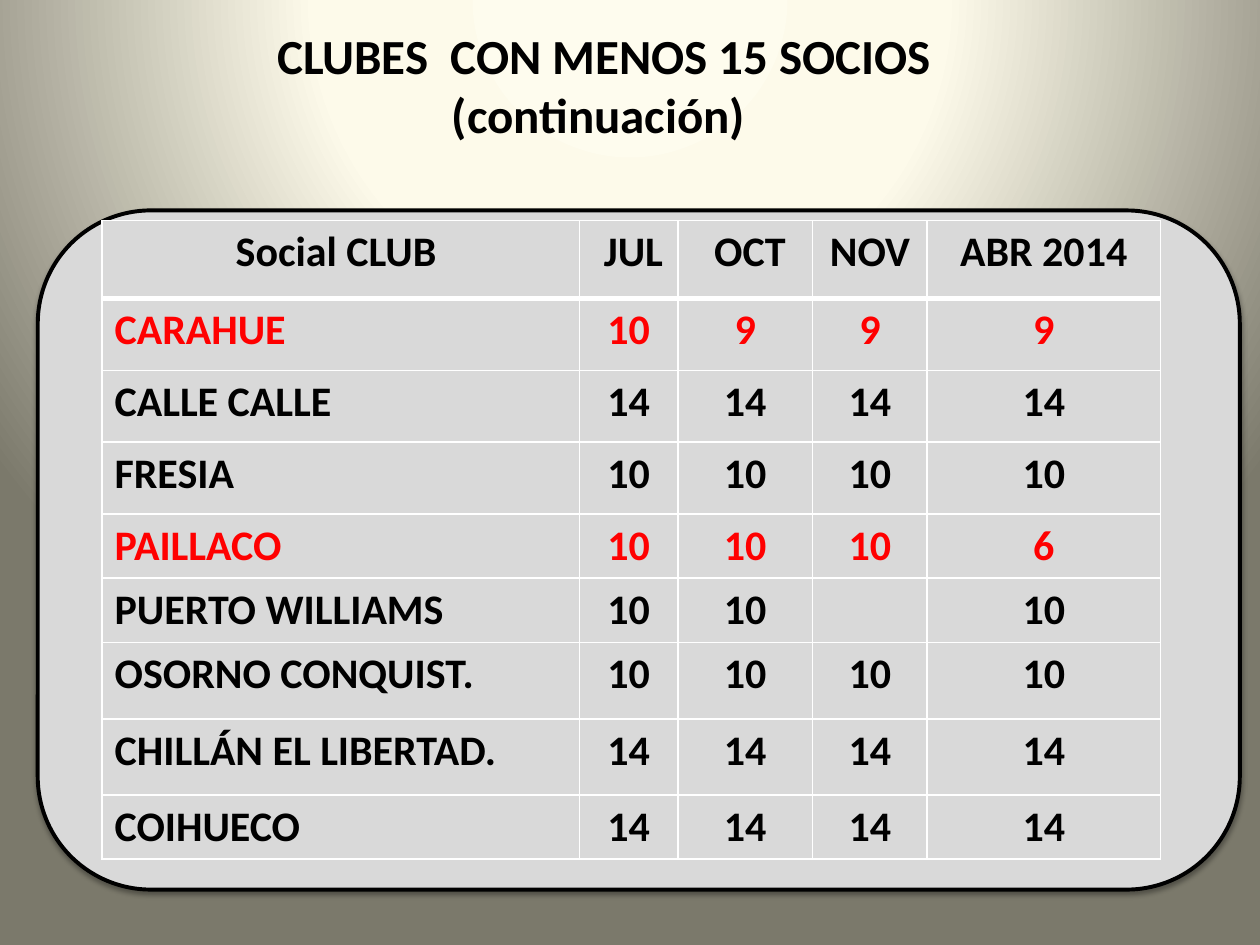
from dataclasses import dataclass
from itertools import product

from pptx import Presentation, util as u
from pptx.dml.color import RGBColor
from pptx.enum import shapes, text
from pptx.oxml import parse_xml
from pptx.oxml.ns import nsdecls, qn

BLACK = RGBColor(0, 0, 0)
RED = RGBColor(255, 0, 0)
GREY = RGBColor(0xD9, 0xD9, 0xD9)
WHITE = RGBColor(255, 255, 255)
CREAM = RGBColor(0xFE, 0xFC, 0xEE)
IVORY = RGBColor(0xFD, 0xFA, 0xEA)
OLIVE = RGBColor(0x7B, 0x79, 0x6B)

FONT = "Calibri"
WIDE, HIGH = u.Inches(10), u.Inches(7.5)
COLS = (3.79, 0.78, 1.07, 0.91, 1.85)
ROWS = (0.62, 0.57, 0.57, 0.57, 0.51, 0.51, 0.61, 0.6, 0.51)


@dataclass
class Box:
    left: float
    top: float
    width: float
    height: float

    def place(self) -> tuple:
        return (int(self.left * WIDE), int(self.top * HIGH),
                int(self.width * WIDE), int(self.height * HIGH))


@dataclass
class Club:
    name: str
    counts: tuple
    color: RGBColor = BLACK


HEAD = Club("Social CLUB ", (" JUL", " OCT", "NOV", "ABR 2014"))
CLUBS = (
    Club("CARAHUE", (10, 9, 9, 9), RED),
    Club("CALLE CALLE", (14,) * 4),
    Club("FRESIA", (10,) * 4),
    Club("PAILLACO", (10, 10, 10, 6), RED),
    Club("PUERTO WILLIAMS", (10, 10, "", 10)),
    Club("OSORNO CONQUIST.", (10,) * 4),
    Club("CHILLÁN EL LIBERTAD.", (14,) * 4),
    Club("COIHUECO", (14,) * 4),
)


def write(para, words: str, size: int, color: RGBColor, align) -> None:
    para.alignment = align
    run = para.add_run()
    run.text = words
    font = run.font
    font.name, font.size, font.bold = FONT, u.Pt(size), True
    font.color.rgb = color


def paint(slide) -> None:
    slide.background.fill.gradient()
    old = next(slide.element.iter(qn("a:gradFill")))
    stops = "".join(
        f'<a:gs pos="{pos * 1000}"><a:srgbClr val="{color}"/></a:gs>'
        for pos, color in ((0, CREAM), (40, IVORY), (100, OLIVE)))
    new = parse_xml(
        f'<a:gradFill {nsdecls("a")} rotWithShape="1"><a:gsLst>{stops}</a:gsLst>'
        '<a:path path="circle"><a:fillToRect l="50000" t="-80000" r="50000" '
        'b="180000"/></a:path></a:gradFill>')
    old.getparent().replace(old, new)


def head(slide, box: Box) -> None:
    title = slide.shapes.title
    title.left, title.top, title.width, title.height = box.place()
    frame = title.text_frame
    frame.word_wrap = False
    frame.auto_size = text.MSO_AUTO_SIZE.NONE
    frame.vertical_anchor = text.MSO_ANCHOR.TOP
    lines = (" CLUBES  CON MENOS 15 SOCIOS", "(continuación)")
    for spot, line in enumerate(lines):
        para = frame.add_paragraph() if spot else frame.paragraphs[0]
        write(para, line, 28, BLACK, text.PP_ALIGN.CENTER)


def panel(slide, box: Box) -> None:
    shape = slide.shapes.add_shape(
        shapes.MSO_SHAPE.ROUNDED_RECTANGLE, *box.place())
    shape.fill.solid()
    shape.fill.fore_color.rgb = GREY
    shape.line.color.rgb = BLACK
    shape.line.width = u.Pt(2.25)
    shape.shadow.inherit = False
    shape.element.spPr.find(qn("a:effectLst")).append(parse_xml(
        f'<a:outerShdw {nsdecls("a")} blurRad="{u.Pt(3.1)}" dist="{u.Pt(1.8)}" '
        f'dir="5400000" rotWithShape="0"><a:srgbClr val="{BLACK}">'
        '<a:alpha val="35000"/></a:srgbClr></a:outerShdw>'))


def edge(cell, side: str, width: float) -> None:
    props = cell._tc.get_or_add_tcPr()
    props.append(parse_xml(
        f'<a:ln{side} {nsdecls("a")} w="{u.Pt(width)}"><a:solidFill>'
        f'<a:srgbClr val="{WHITE}"/></a:solidFill></a:ln{side}>'))


def grid(slide, box: Box) -> None:
    table = slide.shapes.add_table(len(ROWS), len(COLS), *box.place()).table
    for col, width in zip(table.columns, COLS):
        col.width = u.Inches(width)
    for row, height in zip(table.rows, ROWS):
        row.height = u.Inches(height)
    clubs = (HEAD, *CLUBS)
    for r, c in product(range(len(ROWS)), range(len(COLS))):
        cell, club = table.cell(r, c), clubs[r]
        for side in "LRTB":
            thick = (r, side) in ((0, "B"), (1, "T"))
            edge(cell, side, 3 if thick else 1)
        cell.fill.solid()
        cell.fill.fore_color.rgb = GREY
        words = str((club.name, *club.counts)[c])
        if words:
            left = r > 0 and c == 0
            align = text.PP_ALIGN.LEFT if left else text.PP_ALIGN.CENTER
            write(cell.text_frame.paragraphs[0], words, 24, club.color, align)


def main() -> None:
    deck = Presentation()
    deck.slide_width, deck.slide_height = WIDE, HIGH
    slide = deck.slides.add_slide(deck.slide_layouts[5])
    paint(slide)
    head(slide, Box(0.2, 0.02, 0.55, 0.14))
    panel(slide, Box(0.03, 1.67 / 7.5, 0.954, 5.39 / 7.5))
    grid(slide, Box(0.081, 1.75 / 7.5, sum(COLS) / 10, sum(ROWS) / 7.5))
    deck.save("out.pptx")


if __name__ == "__main__":
    main()
